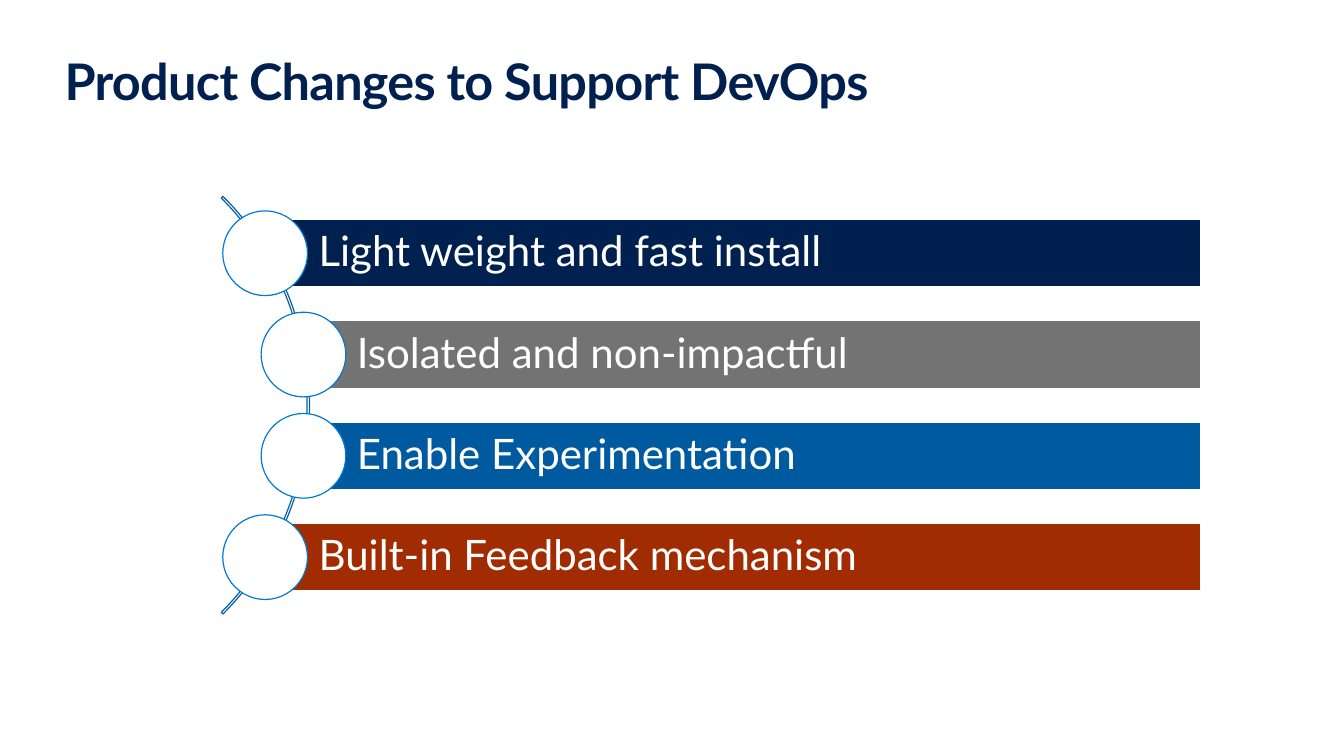
from pptx import Presentation
from pptx.dml.color import RGBColor
from pptx.enum import shapes, text
from pptx.util import Inches, Pt

NAVY = RGBColor(0x00, 0x20, 0x50)
GRAY = RGBColor(0x73, 0x73, 0x73)
BLUE = RGBColor(0x00, 0x5A, 0x9F)
RUST = RGBColor(0xA1, 0x2C, 0x01)
ARC_BLUE = RGBColor(0x00, 0x60, 0xAA)
RING_BLUE = RGBColor(0x00, 0x78, 0xD4)
WHITE = RGBColor(0xFF, 0xFF, 0xFF)

# Content: wording, bar colour, circle centre x
HEADING = "Product Changes to Support DevOps"
CHANGES = [
    ("Light weight and fast install", NAVY, 2.63),
    ("Isolated and non-impactful", GRAY, 3.01),
    ("Enable Experimentation", BLUE, 3.01),
    ("Built-in Feedback mechanism", RUST, 2.63),
]

# Layout in inches
ARC_LEFT, ARC_TOP, ARC_SIZE = -2.79, 1.09, 5.86
MIDDLE = ARC_TOP + ARC_SIZE / 2
PITCH = 1.005
BAR_RIGHT, BAR_HEIGHT = 11.91, 0.67
CIRCLE = 0.84

prs = Presentation()
prs.slide_width, prs.slide_height = Inches(13.33), Inches(7.5)
slide = prs.slides.add_slide(prs.slide_layouts[5])


def add_part(preset, left, top, width, height, fill, line):
    part = slide.shapes.add_shape(
        preset, Inches(left), Inches(top), Inches(width), Inches(height))
    part.shadow.inherit = False
    if fill is None:
        part.fill.background()
    else:
        part.fill.solid()
        part.fill.fore_color.rgb = fill
    part.line.color.rgb = line
    part.line.width = Pt(0.85)
    return part


def set_margins(frame, left, others):
    frame.margin_left = Inches(left)
    frame.margin_top = frame.margin_right = frame.margin_bottom = Inches(others)


# Title
title = slide.shapes.title
title.left, title.top = Inches(0.64), Inches(0.5)
title.width, title.height = Inches(12.05), Inches(0.61)
frame = title.text_frame
frame.text = HEADING
frame.word_wrap = True
frame.auto_size = text.MSO_AUTO_SIZE.NONE
frame.vertical_anchor = text.MSO_ANCHOR.TOP
set_margins(frame, 0, 0)
heading = frame.paragraphs[0]
heading.alignment = text.PP_ALIGN.LEFT
heading.font.name, heading.font.size = "Lato", Pt(36)
heading.font.bold = True
heading.font.color.rgb = NAVY
heading.runs[0]._r.get_or_add_rPr().set("spc", "-50")

# Arc behind the bars, from 315 to 45 degrees
arc = add_part(shapes.MSO_SHAPE.BLOCK_ARC, ARC_LEFT, ARC_TOP,
               ARC_SIZE, ARC_SIZE, None, ARC_BLUE)
for i, value in enumerate((189, 27, 0.004)):
    arc.adjustments[i] = value

# Bars, each with a circle centred on its left edge
for i, (wording, colour, x) in enumerate(CHANGES):
    y = MIDDLE + (i - (len(CHANGES) - 1) / 2) * PITCH
    bar = add_part(shapes.MSO_SHAPE.RECTANGLE, x, y - BAR_HEIGHT / 2,
                   BAR_RIGHT - x, BAR_HEIGHT, colour, WHITE)
    frame = bar.text_frame
    frame.text = wording
    frame.word_wrap = True
    frame.vertical_anchor = text.MSO_ANCHOR.MIDDLE
    set_margins(frame, 0.53, 0.08)
    label = frame.paragraphs[0]
    label.alignment = text.PP_ALIGN.LEFT
    label.line_spacing = 0.9
    label.font.name, label.font.size = "Lato", Pt(30)
    label.font.color.rgb = WHITE
    add_part(shapes.MSO_SHAPE.OVAL, x - CIRCLE / 2, y - CIRCLE / 2,
             CIRCLE, CIRCLE, WHITE, RING_BLUE)

prs.save("out.pptx")
